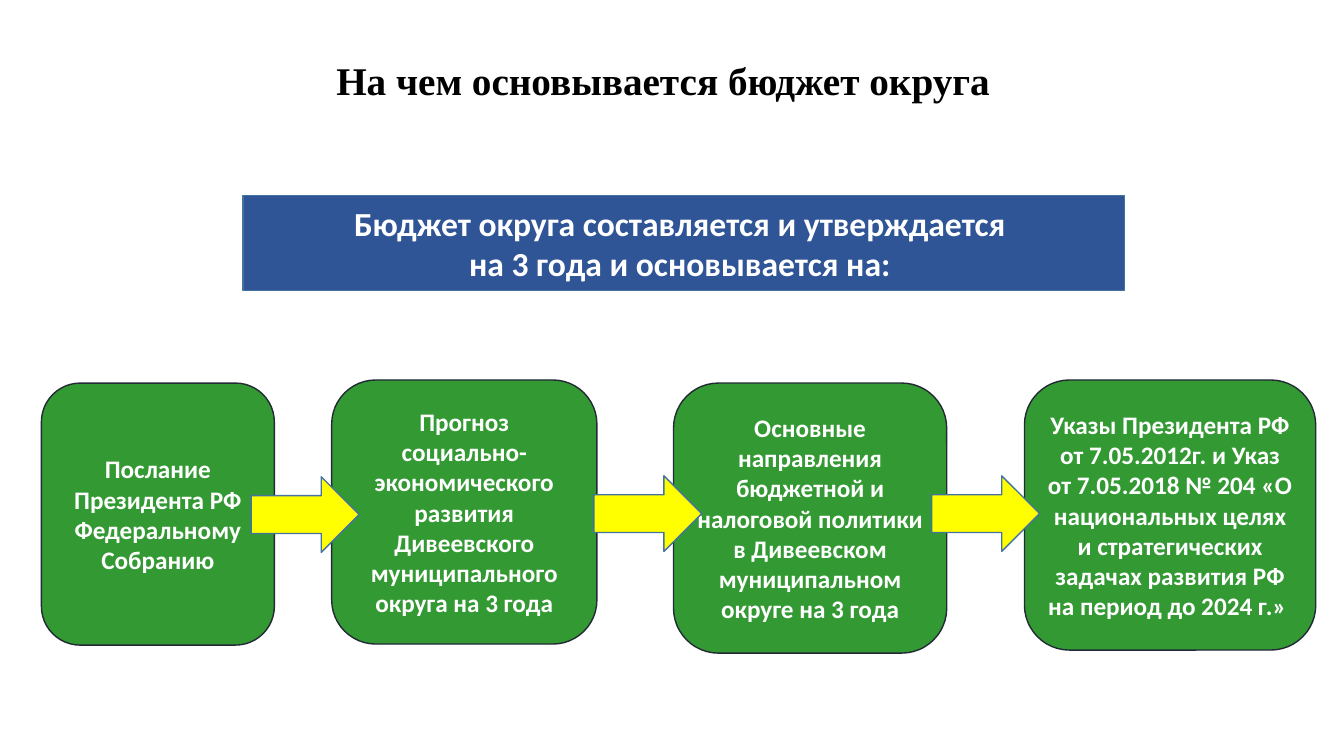
from pptx import Presentation
from pptx.dml.color import RGBColor
from pptx.enum.shapes import MSO_SHAPE
from pptx.enum.text import MSO_ANCHOR, PP_ALIGN
from pptx.util import Inches, Pt

BANNER_SHAPE = MSO_SHAPE.FLOWCHART_PROCESS
ROUNDED = MSO_SHAPE.FLOWCHART_ALTERNATE_PROCESS
ARROW = MSO_SHAPE.RIGHT_ARROW
MIDDLE = MSO_ANCHOR.MIDDLE
CENTER = PP_ALIGN.CENTER

BLACK = RGBColor(0x00, 0x00, 0x00)
WHITE = RGBColor(0xFF, 0xFF, 0xFF)
BLUE = RGBColor(0x2F, 0x55, 0x97)
EDGE_BLUE = RGBColor(0x43, 0x73, 0x9E)
GREEN = RGBColor(0x33, 0x99, 0x33)
EDGE_DARK = RGBColor(0x22, 0x2A, 0x35)
YELLOW = RGBColor(0xFF, 0xFF, 0x00)

HEADING_FONT = {"name": "Times New Roman", "size": Pt(28), "bold": True}
BANNER_FONT = {"name": "Calibri", "size": Pt(24), "bold": True}
STEP_FONT = {"name": "Calibri", "size": Pt(18), "bold": True}

# Regions: left, top, width, height in percent of the slide
HEADING_AREA = (13.95, 4.53, 71.49, 12.13)
BANNER_AREA = (18.08, 25.87, 65.57, 12.53)
STEPS_AREA = (3.08, 50.27, 94.82, 36.13)

# Steps and arrows: percent of the steps region
STEPS = [
    ((0, 1.11, 18.28, 95.94),
     "Послание Президента РФ Федеральному Собранию"),
    ((22.78, 0, 20.81, 96.68),
     "Прогноз социально-экономического развития Дивеевского "
     "муниципального округа на 3 года"),
    ((49.6, 1.11, 21.44, 98.89),
     "Основные направления бюджетной и налоговой политики в Дивеевском "
     "муниципальном округе на 3 года"),
    ((77.14, 0, 22.86, 98.89),
     "Указы Президента РФ от 7.05.2012г. и Указ от 7.05.2018 № 204 "
     "«О национальных целях и стратегических задачах развития РФ "
     "на период до 2024 г.» "),
]
ARROW_STARTS = [(16.46, 35.42), (43.35, 35.06), (69.86, 35.06)]
ARROW_SIZE = (8.47, 27.68)


def part_of(box, shares):
    """Box at the given percentages of an outer box."""
    left, top, width, height = box
    x, y, w, h = (share / 100 for share in shares)
    return (int(left + width * x), int(top + height * y),
            int(width * w), int(height * h))


def add_block(slide, kind, box, fill=None, edge=None):
    block = slide.shapes.add_shape(kind, *box)
    block.shadow.inherit = False
    if fill is None:
        block.fill.background()
    else:
        block.fill.solid()
        block.fill.fore_color.rgb = fill
    if edge is None:
        block.line.fill.background()
    else:
        block.line.color.rgb = edge
        block.line.width = Pt(1)
    return block


def write(block, lines, font, color):
    frame = block.text_frame
    frame.word_wrap = True
    frame.vertical_anchor = MIDDLE
    for number, line in enumerate(lines):
        paragraph = frame.add_paragraph() if number else frame.paragraphs[0]
        paragraph.alignment = CENTER
        run = paragraph.add_run()
        run.text = line
        run.font.color.rgb = color
        for attribute, value in font.items():
            setattr(run.font, attribute, value)


def add_heading(slide, box):
    heading = add_block(slide, ROUNDED, box)
    write(heading, ["На чем основывается бюджет округа "], HEADING_FONT, BLACK)


def add_banner(slide, box):
    banner = add_block(slide, BANNER_SHAPE, box, BLUE, EDGE_BLUE)
    write(banner, ["Бюджет округа составляется и утверждается ",
                   "на 3 года и основывается на: "], BANNER_FONT, WHITE)


def add_steps(slide, box):
    for shares, text in STEPS:
        step = add_block(slide, ROUNDED, part_of(box, shares), GREEN, EDGE_DARK)
        write(step, [text], STEP_FONT, WHITE)
    for start in ARROW_STARTS:
        add_block(slide, ARROW, part_of(box, start + ARROW_SIZE),
                  YELLOW, EDGE_BLUE)


def main():
    deck = Presentation()
    deck.slide_width, deck.slide_height = Inches(13.33), Inches(7.5)
    page = (0, 0, deck.slide_width, deck.slide_height)
    slide = deck.slides.add_slide(deck.slide_layouts[6])
    add_banner(slide, part_of(page, BANNER_AREA))
    add_heading(slide, part_of(page, HEADING_AREA))
    add_steps(slide, part_of(page, STEPS_AREA))
    deck.save("out.pptx")


if __name__ == "__main__":
    main()
